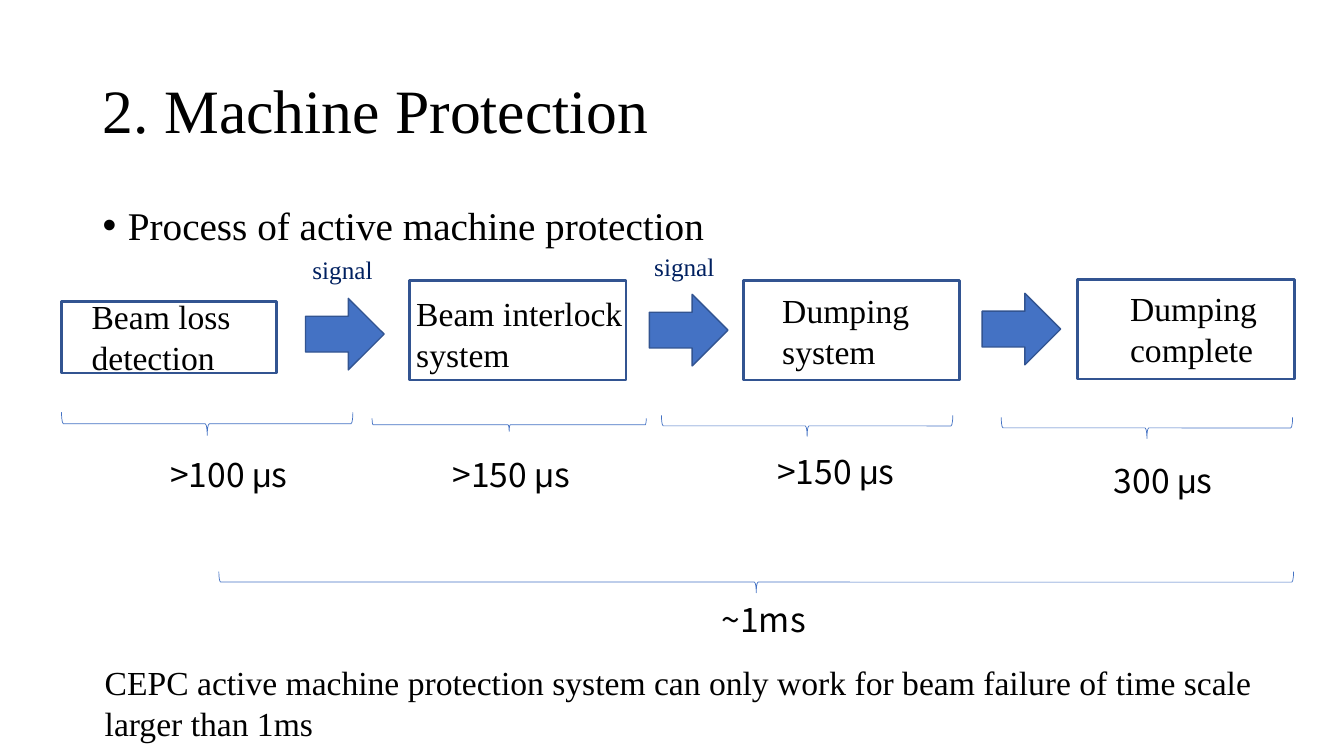
import pptx
import pptx.util
import pptx.dml.color
import pptx.enum.shapes
import pptx.enum.text
import pptx.oxml

Inches = pptx.util.Inches
Pt = pptx.util.Pt
Shape = pptx.enum.shapes.MSO_SHAPE
Text = pptx.enum.text

SERIF = "Times New Roman"
SANS = "Noto Sans CJK SC"
BLUE = "4472C4"
EDGE = "325491"

# Box: left, top, width, height; label: left, top, width, lines
STEPS = [
    ((0.61, 2.99, 2.13, 0.71), (0.81, 2.89, 2.28), ["Beam loss detection"]),
    ((4.06, 2.78, 2.15, 0.99), (4.03, 2.86, 2.28), ["Beam interlock", "system"]),
    ((7.37, 2.78, 2.15, 0.99), (7.66, 2.83, 2.28), ["Dumping system"]),
    ((10.69, 2.77, 2.15, 0.99), (11.11, 2.81, 1.61), ["Dumping complete"]),
]
ARROWS = [(3.03, 2.96), (6.44, 2.92), (9.74, 2.91)]
SIGNALS = [(3.0, 2.47), (6.39, 2.44)]
# Brace: left, top, width, height; label: left, top, width, delay
TIMES = [
    ((0.61, 4.09, 2.89, 0.23), (1.59, 4.45, 1.51), ">100 "),
    ((3.69, 4.15, 2.72, 0.13), (4.39, 4.45, 1.59), ">150 "),
    ((6.56, 4.12, 2.89, 0.21), (7.61, 4.42, 1.51), ">150 "),
    ((9.93, 4.14, 2.89, 0.21), (10.95, 4.51, 1.33), "300 "),
]


def color(code):
    return pptx.dml.color.RGBColor.from_string(code)


def add_run(para, text, size, face=SERIF, ink="000000"):
    run = para.add_run()
    run.text = text
    run.font.size = Pt(size)
    run.font.name = face
    run.font.color.rgb = color(ink)


def add_text(slide, left, top, width, height=0.91):
    """Add an empty wrapping text box and return its frame."""
    box = slide.shapes.add_textbox(
        Inches(left), Inches(top), Inches(width), Inches(height))
    box.text_frame.word_wrap = True
    return box.text_frame


def add_label(slide, place, lines, size=24, face=SERIF, ink="000000"):
    frame = add_text(slide, *place)
    for i, line in enumerate(lines):
        para = frame.add_paragraph() if i else frame.paragraphs[0]
        add_run(para, line, size, face, ink)


def add_form(slide, kind, place, edge, weight, fill=None):
    form = slide.shapes.add_shape(kind, *(Inches(v) for v in place))
    form.shadow.inherit = False
    form.line.color.rgb = color(edge)
    form.line.width = Pt(weight)
    if fill:
        form.fill.solid()
        form.fill.fore_color.rgb = color(fill)
    else:
        form.fill.background()
    return form


def add_brace(slide, left, top, width, height):
    """Add a brace that points down and covers the given area."""
    shift = (width - height) / 2
    place = (left + shift, top - shift, height, width)
    add_form(slide, Shape.RIGHT_BRACE, place, BLUE, 0.5).rotation = 90


def add_delay(slide, place, value):
    para = add_text(slide, *place, 0.5).paragraphs[0]
    for text, face in [(value, SANS), ("μ", "Arial"), ("s", SANS)]:
        add_run(para, text, 24, face)


def add_bullet(slide, place, text):
    para = add_text(slide, *place).paragraphs[0]
    props = para._p.get_or_add_pPr()
    props.set("marL", str(Inches(0.25)))
    props.set("indent", str(-Inches(0.25)))
    space = pptx.oxml.ns.nsdecls("a")
    for tag in ('buFont {} typeface="Arial"', 'buChar {} char="•"'):
        props.append(pptx.oxml.parse_xml(f"<a:{tag.format(space)}/>"))
    para.line_spacing = 0.9
    add_run(para, text, 28)


def set_title(slide, text):
    title = slide.shapes.title
    title.left, title.top = Inches(0.92), Inches(0.4)
    title.width, title.height = Inches(11.5), Inches(1.45)
    frame = title.text_frame
    frame.auto_size = Text.MSO_AUTO_SIZE.NONE
    frame.vertical_anchor = Text.MSO_ANCHOR.MIDDLE
    para = frame.paragraphs[0]
    para.alignment = Text.PP_ALIGN.LEFT
    para.line_spacing = 0.9
    add_run(para, text, 44)


def main():
    deck = pptx.Presentation()
    deck.slide_width, deck.slide_height = Inches(13.33), Inches(7.5)
    slide = deck.slides.add_slide(deck.slide_layouts[5])

    set_title(slide, "2. Machine Protection")
    add_bullet(slide, (0.92, 2, 11.5, 0.71),
               "Process of active machine protection")

    for box, place, lines in STEPS:
        add_label(slide, place, lines)
        add_form(slide, Shape.RECTANGLE, box, EDGE, 2)
    for left, top in ARROWS:
        add_form(slide, Shape.RIGHT_ARROW, (left, top, 0.78, 0.71),
                 EDGE, 1, BLUE)
    for left, top in SIGNALS:
        add_label(slide, (left, top, 0.92, 0.4), ["signal"], 18, ink="002060")

    for brace, place, value in TIMES:
        add_brace(slide, *brace)
        add_delay(slide, place, value)
    add_brace(slide, 2.17, 5.67, 10.66, 0.21)
    add_label(slide, (7.06, 5.89, 1.33, 0.5), ["~1ms"], face=SANS)

    add_label(slide, (0.94, 6.52, 11.89),
              ["CEPC active machine protection system can only work for "
               "beam failure of time scale larger than 1ms"])
    deck.save("out.pptx")


if __name__ == "__main__":
    main()
